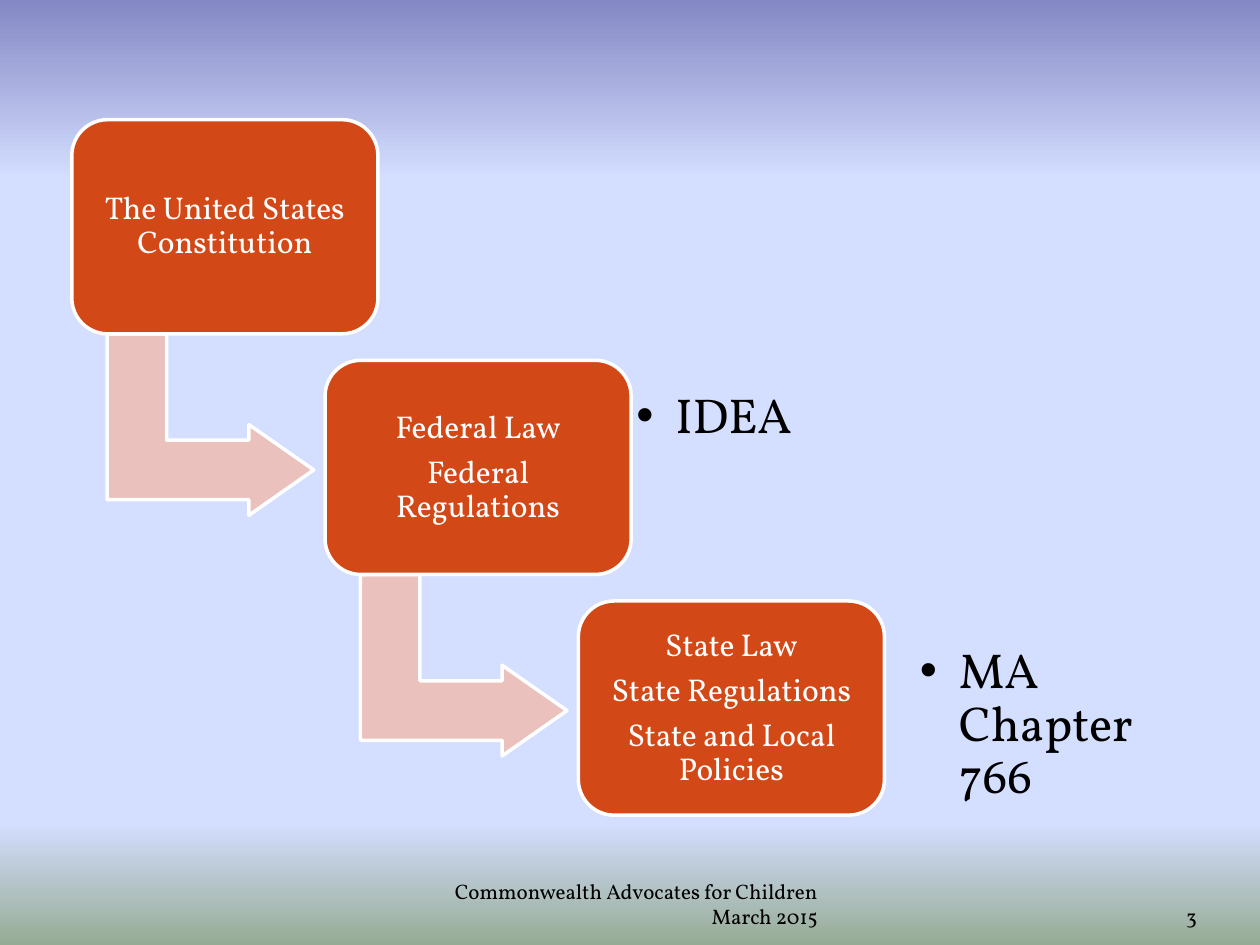
import pptx
import pptx.util
from pptx.dml.color import RGBColor
from pptx.enum.shapes import MSO_SHAPE
from pptx.enum.text import MSO_ANCHOR, MSO_AUTO_SIZE, PP_ALIGN
from pptx.oxml.ns import qn
from pptx.util import Inches
from lxml import etree

WHITE = RGBColor(0xFF, 0xFF, 0xFF)
BLACK = RGBColor(0, 0, 0)
ORANGE = RGBColor(0xD3, 0x48, 0x17)
PINK = RGBColor(0xEA, 0xC1, 0xBD)
DUSK = RGBColor(0x84, 0x88, 0xC4)
SKY = RGBColor(0xD4, 0xDE, 0xFF)
GRASS = RGBColor(0x96, 0xAB, 0x94)


class LawSlide:
    font_name = "Vollkorn"

    def __init__(self, slide):
        self.slide = slide

    def background(self, stops):
        fill = self.slide.background.fill
        fill.gradient()
        fill.gradient_angle = 270
        stop_list = next(self.slide.element.iter(qn("a:gsLst")))
        for old_stop in list(stop_list):
            stop_list.remove(old_stop)
        for percent, color in stops:
            stop = etree.SubElement(stop_list, qn("a:gs"), pos=str(percent * 1000))
            etree.SubElement(stop, qn("a:srgbClr"), val=str(color))

    def set_text(self, frame, lines, size, color, align, anchor, insets):
        frame.word_wrap = True
        frame.auto_size = MSO_AUTO_SIZE.NONE
        frame.vertical_anchor = anchor
        frame.margin_left, frame.margin_top, frame.margin_right, frame.margin_bottom = (
            Inches(inset) for inset in insets)
        frame.text = "\n".join(lines)
        for paragraph in frame.paragraphs:
            paragraph.alignment = align
            paragraph.font.name = self.font_name
            paragraph.font.size = pptx.util.Pt(size)
            paragraph.font.color.rgb = color

    def block(self, kind, left, top, width, height, color, adjustments):
        shape = self.slide.shapes.add_shape(
            kind, Inches(left), Inches(top), Inches(width), Inches(height))
        shape.shadow.inherit = False
        for index, value in enumerate(adjustments):
            shape.adjustments[index] = value
        shape.fill.solid()
        shape.fill.fore_color.rgb = color
        shape.line.color.rgb = WHITE
        shape.line.width = pptx.util.Pt(2)
        return shape

    def arrow(self, left, top):
        arrow = self.block(MSO_SHAPE.BENT_UP_ARROW, left, top, 1.44, 1.64,
                           PINK, (0.328, 0.25, 0.358))
        arrow.rotation = 90

    def step(self, left, top, lines):
        step = self.block(MSO_SHAPE.ROUNDED_RECTANGLE, left, top, 2.43, 1.7,
                          ORANGE, (0.167,))
        self.set_text(step.text_frame, lines, 18, WHITE, PP_ALIGN.CENTER,
                      MSO_ANCHOR.MIDDLE, (0.07,) * 4)
        for paragraph in step.text_frame.paragraphs:
            paragraph.line_spacing = 0.9
            paragraph.space_after = pptx.util.Pt(6.3)

    def bullet(self, body, left, top, width, height, text):
        body.left, body.top = Inches(left), Inches(top)
        body.width, body.height = Inches(width), Inches(height)
        self.set_text(body.text_frame, [text], 28, BLACK, PP_ALIGN.LEFT,
                      MSO_ANCHOR.MIDDLE, (0.12,) * 4)
        paragraph = body.text_frame.paragraphs[0]
        paragraph.line_spacing = 0.9
        paragraph.space_before = pptx.util.Pt(0)
        paragraph.space_after = pptx.util.Pt(4.2)
        properties = next(body.element.iter(qn("a:pPr")))
        properties.set("marL", str(Inches(0.31)))
        properties.set("indent", str(Inches(-0.31)))

    def footer(self, left, width, text, side_inset):
        box = self.slide.shapes.add_textbox(
            Inches(left), Inches(7.02), Inches(width), Inches(0.4))
        self.set_text(box.text_frame, [text], 12, BLACK, PP_ALIGN.RIGHT,
                      MSO_ANCHOR.BOTTOM, (side_inset, 0.05, side_inset, 0.05))


def main():
    presentation = pptx.Presentation()
    presentation.slide_width = Inches(10)
    presentation.slide_height = Inches(7.5)
    slide = presentation.slides.add_slide(presentation.slide_layouts[3])
    title, federal_example, state_example = slide.placeholders
    title.element.getparent().remove(title.element)

    law = LawSlide(slide)
    law.background([(0, DUSK), (19, SKY), (87, SKY), (100, GRASS)])

    levels = [
        ["The United States Constitution"],
        ["Federal Law", "Federal Regulations"],
        ["State Law", "State Regulations", "State and Local Policies"],
    ]
    for index, lines in enumerate(levels):
        left, top = 0.57 + 2.01 * index, 0.95 + 1.91 * index
        if index < len(levels) - 1:
            law.arrow(left + 0.38, top + 1.6)
        law.step(left, top, lines)

    law.bullet(federal_example, 4.93, 2.63, 1.77, 1.37, "IDEA")
    law.bullet(state_example, 7.18, 5.07, 2.07, 1.37, "MA Chapter 766")
    law.footer(3.42, 3.17, "Commonwealth Advocates for Children March 2015", 0.1)
    law.footer(8.67, 0.83, "3", 0)
    presentation.save("out.pptx")


if __name__ == "__main__":
    main()
